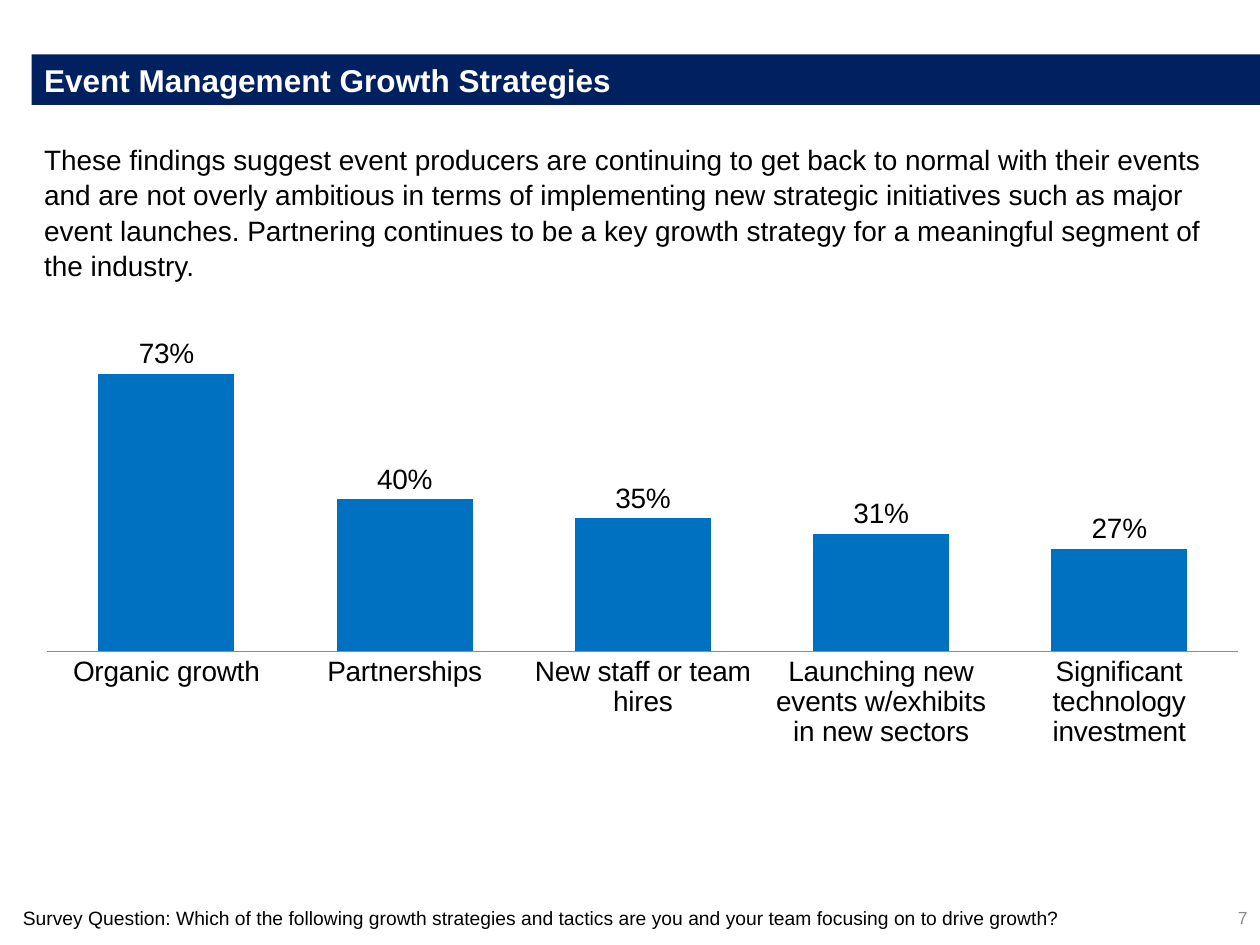
from dataclasses import dataclass

from lxml.etree import SubElement
from pptx import Presentation
from pptx.chart.data import CategoryChartData
from pptx.dml.color import RGBColor
from pptx.enum.chart import XL_CHART_TYPE as ChartType
from pptx.enum.chart import XL_LABEL_POSITION as LabelPosition
from pptx.enum.chart import XL_TICK_MARK as TickMark
from pptx.enum.text import MSO_ANCHOR as Anchor
from pptx.enum.text import MSO_AUTO_SIZE as AutoSize
from pptx.enum.text import PP_ALIGN as Align
from pptx.oxml import parse_xml
from pptx.oxml.ns import nsdecls, qn
from pptx.util import Pt


@dataclass(frozen=True)
class Theme:
    """Colours, typeface and type sizes of the slide."""
    font: str = "Arial"
    navy: RGBColor = RGBColor(0x00, 0x20, 0x60)
    blue: RGBColor = RGBColor(0x00, 0x70, 0xC0)
    white: RGBColor = RGBColor(0xFF, 0xFF, 0xFF)
    black: RGBColor = RGBColor(0x00, 0x00, 0x00)
    grey: RGBColor = RGBColor(0x8C, 0x8C, 0x8C)
    title_size: int = 18
    body_size: int = 16
    note_size: int = 11
    number_size: int = 10


THEME = Theme()
STRATEGIES = {
    "Organic growth": 0.73,
    "Partnerships": 0.40,
    "New staff or team hires": 0.35,
    "Launching new events w/exhibits in new sectors": 0.31,
    "Significant technology investment": 0.27,
}
FINDINGS = (
    "These findings suggest event producers are continuing to get back to normal "
    "with their events and are not overly ambitious in terms of implementing new "
    "strategic initiatives such as major event launches. Partnering continues to be "
    "a key growth strategy for a meaningful segment of the industry."
)
SURVEY_QUESTION = (
    "Survey Question: Which of the following growth strategies and tactics "
    "are you and your team focusing on to drive growth?"
)


def set_font(font, size, color, bold=False):
    """Apply the theme typeface with a size, colour and weight."""
    font.name, font.size, font.bold = THEME.font, Pt(size), bold
    font.color.rgb = color


def place(shape, left, top, width, height):
    """Move and size a shape, in points."""
    shape.left, shape.top = Pt(left), Pt(top)
    shape.width, shape.height = Pt(width), Pt(height)


def write(shape, text, size, color, bold=False, align=Align.LEFT,
          anchor=Anchor.TOP, spacing=1.0):
    """Fill a shape with one formatted paragraph and return it."""
    frame = shape.text_frame
    frame.word_wrap = True
    frame.auto_size = AutoSize.NONE
    frame.vertical_anchor = anchor
    paragraph = frame.paragraphs[0]
    paragraph.alignment, paragraph.line_spacing = align, spacing
    paragraph.space_before = Pt(0)
    run = paragraph.add_run()
    run.text = text
    set_font(run.font, size, color, bold)
    return paragraph


def add_title(slide, text):
    """Turn the title placeholder into the navy banner."""
    banner = slide.shapes.title
    place(banner, 18, 31, 702, 29)
    banner.fill.solid()
    banner.fill.fore_color.rgb = THEME.navy
    write(banner, text, THEME.title_size, THEME.white, bold=True, anchor=Anchor.MIDDLE)


def add_findings(slide, text):
    """Write the summary in the body placeholder without a bullet."""
    findings = slide.placeholders[1]
    place(findings, 18, 77, 678, 85)
    paragraph = write(findings, text, THEME.body_size, THEME.black, spacing=1.05)
    properties = paragraph._p.get_or_add_pPr()
    properties.set("marL", "0")
    properties.set("indent", "0")
    SubElement(properties, qn("a:buNone"))


def add_note(slide, box, text, size, color, **formatting):
    """Add a text box at the foot of the slide."""
    note = slide.shapes.add_textbox(*map(Pt, box))
    write(note, text, size, color, **formatting)


def set_plot_layout(chart, x, y, w, h):
    """Fix the inner plot area as fractions of the chart."""
    plot_area = chart._chartSpace.chart.plotArea
    for layout in plot_area.findall(qn("c:layout")):
        plot_area.remove(layout)
    fractions = "".join(
        f'<c:{name} val="{value}"/>' for name, value in zip("xywh", (x, y, w, h)))
    plot_area.insert(0, parse_xml(
        f'<c:layout {nsdecls("c")}><c:manualLayout><c:layoutTarget val="inner"/>'
        f'<c:xMode val="edge"/><c:yMode val="edge"/>{fractions}'
        '</c:manualLayout></c:layout>'))


def add_strategy_chart(slide, strategies):
    """Add the column chart of growth strategies."""
    chart_data = CategoryChartData(number_format="0%")
    chart_data.categories = list(strategies)
    chart_data.add_series("Series 1", list(strategies.values()))
    chart = slide.shapes.add_chart(
        ChartType.COLUMN_CLUSTERED, Pt(6), Pt(174), Pt(702), Pt(348), chart_data).chart
    chart.has_legend = chart.has_title = False
    set_font(chart.font, THEME.body_size, THEME.black)
    set_plot_layout(chart, 0.03, 0.07, 0.97, 0.5)

    shares = chart.value_axis
    shares.minimum_scale, shares.maximum_scale = 0, 0.8
    shares.has_major_gridlines = shares.visible = False
    names = chart.category_axis
    names.major_tick_mark = names.minor_tick_mark = TickMark.NONE
    names.format.line.color.rgb = THEME.grey
    set_font(names.tick_labels.font, THEME.body_size, THEME.black)

    columns = chart.plots[0]
    columns.gap_width, columns.overlap = 75, -25
    columns.vary_by_categories = False
    columns.series[0].format.fill.solid()
    columns.series[0].format.fill.fore_color.rgb = THEME.blue
    columns.has_data_labels = True
    labels = columns.data_labels
    labels.show_value = True
    labels.number_format, labels.number_format_is_linked = "0%", False
    labels.position = LabelPosition.OUTSIDE_END
    set_font(labels.font, THEME.body_size, THEME.black)


def main():
    """Build and save the slide."""
    deck = Presentation()
    deck.slide_width, deck.slide_height = Pt(720), Pt(540)
    slide = deck.slides.add_slide(deck.slide_layouts[1])
    add_title(slide, "Event Management Growth Strategies")
    add_findings(slide, FINDINGS)
    add_strategy_chart(slide, STRATEGIES)
    add_note(slide, (6, 513.5, 690, 20), SURVEY_QUESTION, THEME.note_size, THEME.black,
             spacing=1.07)
    add_note(slide, (552, 510, 168, 29), "7", THEME.number_size, THEME.grey,
             align=Align.RIGHT, anchor=Anchor.MIDDLE)
    deck.save("out.pptx")


if __name__ == "__main__":
    main()
